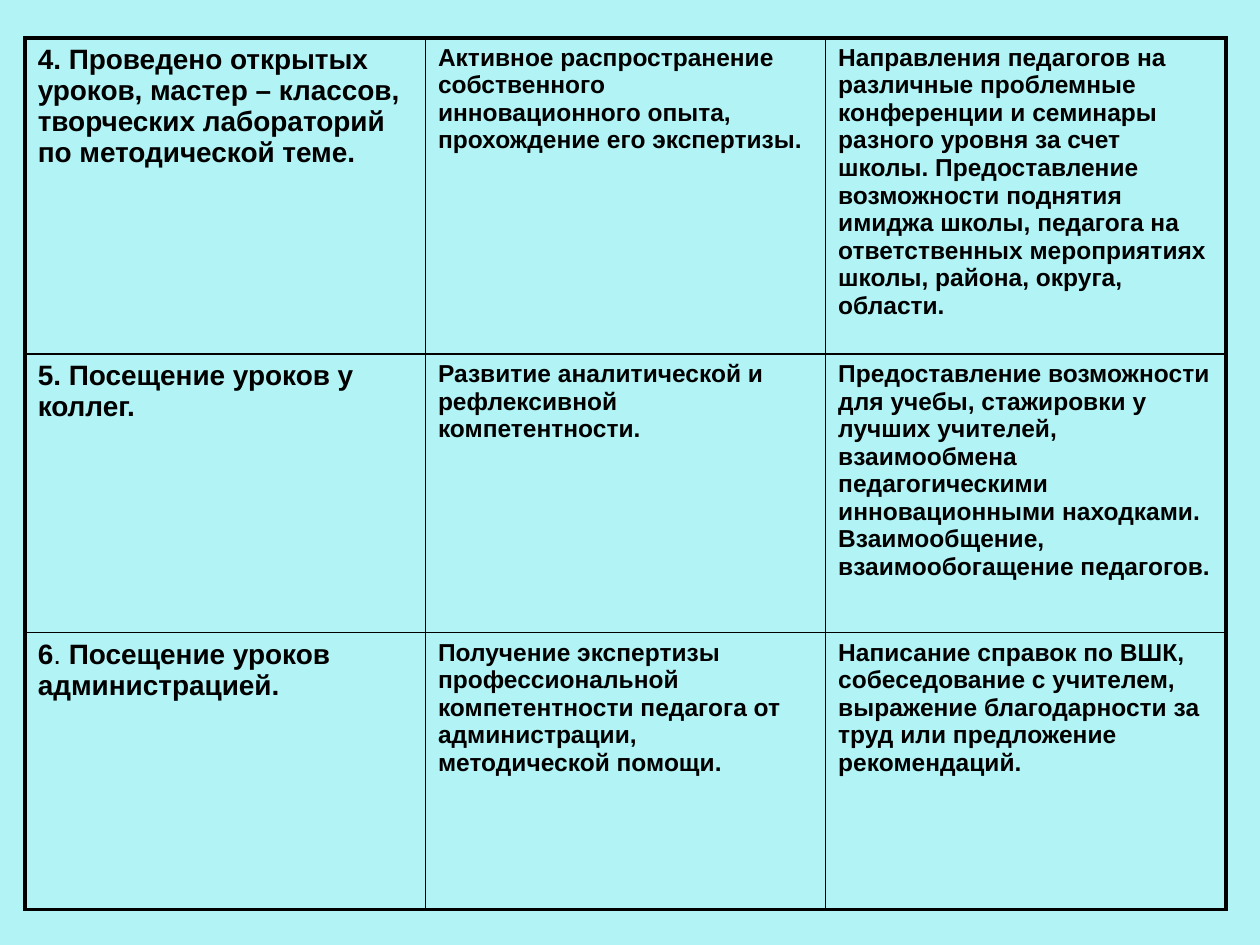
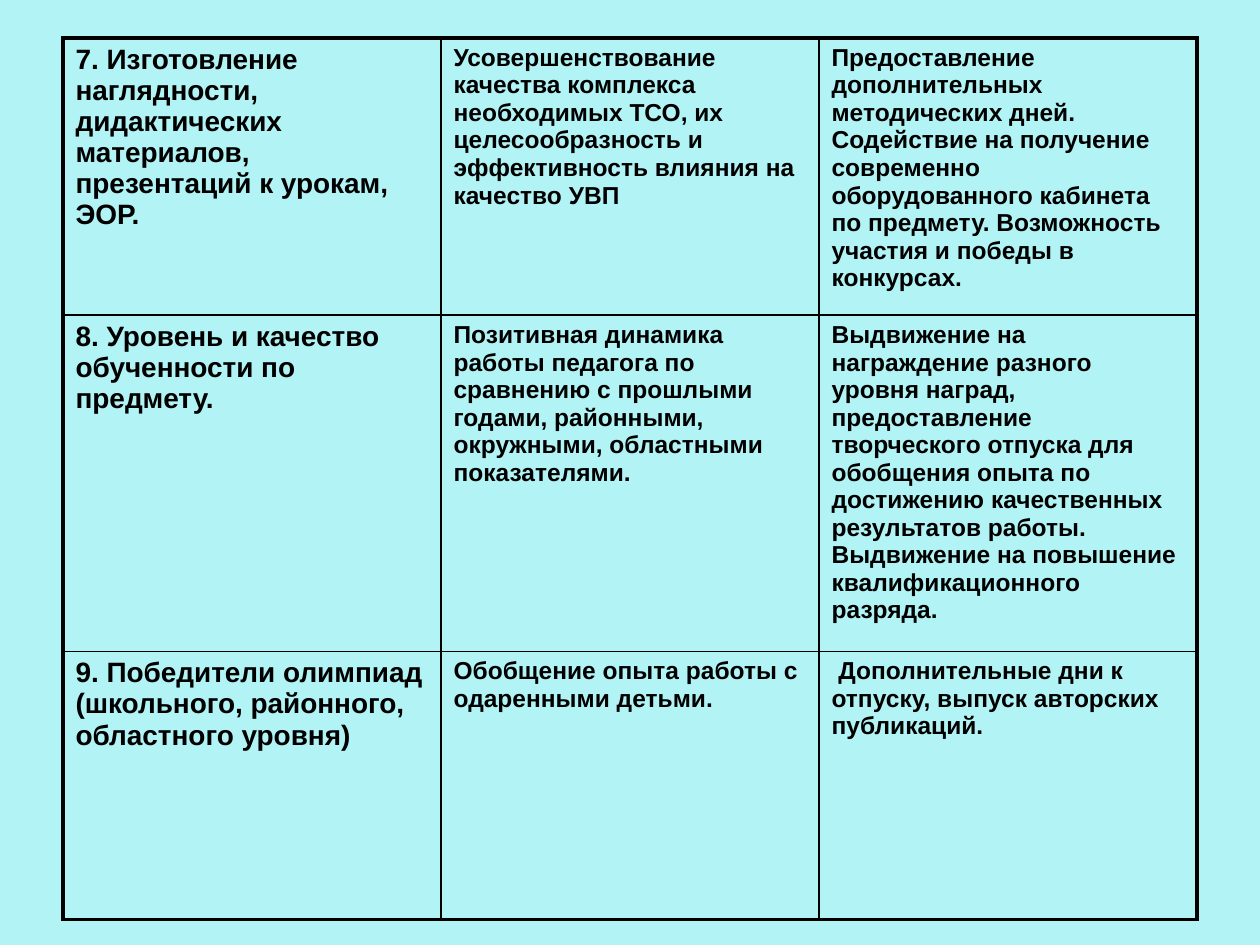
from dataclasses import dataclass

from lxml.etree import SubElement
from pptx import Presentation
from pptx.dml.color import RGBColor
from pptx.oxml.ns import qn
from pptx.slide import Slide
from pptx.table import _Cell
from pptx.util import Inches, Pt

WIDTH, HEIGHT = Inches(10), Inches(7.5)
FONT = "Arial"
BACK, INK = "B2F4F5", "000000"
THICK, THIN = 2.25, 1
SIZES = (16, 14, 14)  # points, by column


@dataclass
class Run:
    text: str
    bold: bool = True


@dataclass
class Grid:
    """Lengths are percent of the slide's width or height."""
    left: float
    top: float
    width: float
    rows: tuple[float, ...]
    texts: list[tuple[str | list[Run], ...]]


GRIDS = [
    Grid(2, 4, 95.3, (33.47, 29.47, 29.33), [
        ("4. Проведено открытых уроков, мастер – классов, творческих "
         "лабораторий по методической теме.",
         "Активное распространение собственного инновационного опыта, "
         "прохождение его экспертизы.",
         "Направления педагогов на различные проблемные конференции и "
         "семинары разного уровня за счет школы. Предоставление возможности "
         "поднятия имиджа школы, педагога на ответственных мероприятиях "
         "школы, района, округа, области."),
        ("5. Посещение уроков у коллег.",
         "Развитие аналитической и рефлексивной компетентности.",
         "Предоставление возможности для учебы, стажировки у лучших "
         "учителей, взаимообмена педагогическими инновационными находками. "
         "Взаимообщение, взаимообогащение педагогов."),
        ([Run("6"), Run(". ", False), Run("Посещение уроков администрацией.")],
         "Получение экспертизы профессиональной компетентности педагога от "
         "администрации, методической помощи.",
         "Написание справок по ВШК, собеседование с учителем, выражение "
         "благодарности за труд или предложение рекомендаций."),
    ]),
    Grid(5, 4, 90, (29.33, 35.6, 28.4), [
        ("7. Изготовление наглядности, дидактических материалов, "
         "презентаций к урокам, ЭОР.",
         "Усовершенствование качества комплекса необходимых ТСО, их "
         "целесообразность и эффективность влияния на качество УВП",
         "Предоставление дополнительных методических дней. Содействие на "
         "получение современно оборудованного кабинета по предмету. "
         "Возможность участия и победы в конкурсах."),
        ("8. Уровень и качество обученности по предмету.",
         "Позитивная динамика работы педагога по сравнению с прошлыми "
         "годами, районными, окружными, областными показателями.",
         "Выдвижение на награждение разного уровня наград, предоставление "
         "творческого отпуска для обобщения опыта по достижению качественных "
         "результатов работы. Выдвижение на повышение квалификационного "
         "разряда."),
        ("9. Победители олимпиад (школьного, районного, областного уровня)",
         "Обобщение опыта работы с одаренными детьми.",
         " Дополнительные дни к отпуску, выпуск авторских публикаций."),
    ]),
]


def color(code: str) -> RGBColor:
    return RGBColor.from_string(code)


def across(share: float) -> int:
    return round(WIDTH * share / 100)


def down(share: float) -> int:
    return round(HEIGHT * share / 100)


def write(cell: _Cell, text: str | list[Run], size: float) -> None:
    para = cell.text_frame.paragraphs[0]
    for part in [Run(text)] if isinstance(text, str) else text:
        run = para.add_run()
        run.text = part.text
        font = run.font
        font.name, font.size, font.bold = FONT, Pt(size), part.bold
        font.color.rgb = color(INK)


def border(cell: _Cell, edges: dict[str, bool]) -> None:
    """Draw the four sides, thick where a side is on the table's edge."""
    props = cell._tc.get_or_add_tcPr()
    for side, outer in edges.items():
        line = SubElement(props, qn(f"a:ln{side}"),
                          w=str(Pt(THICK if outer else THIN)))
        fill = SubElement(line, qn("a:solidFill"))
        SubElement(fill, qn("a:srgbClr"), val=INK)


def draw(slide: Slide, grid: Grid) -> None:
    count, last = len(SIZES), len(grid.rows) - 1
    table = slide.shapes.add_table(
        len(grid.rows), count, across(grid.left), down(grid.top),
        across(grid.width), down(sum(grid.rows))).table
    table.first_row = table.horz_banding = False
    for column in table.columns:
        column.width = across(grid.width / count)
    for r, (share, texts) in enumerate(zip(grid.rows, grid.texts)):
        table.rows[r].height = down(share)
        for c, (text, size) in enumerate(zip(texts, SIZES)):
            cell = table.cell(r, c)
            write(cell, text, size)
            border(cell, {"L": c == 0, "R": c == count - 1,
                          "T": r == 0, "B": r == last})
            cell.fill.background()


def main() -> None:
    deck = Presentation()
    deck.slide_width, deck.slide_height = WIDTH, HEIGHT
    blank = deck.slide_layouts.get_by_name("Blank")
    for grid in GRIDS:
        slide = deck.slides.add_slide(blank)
        back = slide.background.fill
        back.solid()
        back.fore_color.rgb = color(BACK)
        draw(slide, grid)
    deck.save("out.pptx")


if __name__ == "__main__":
    main()
